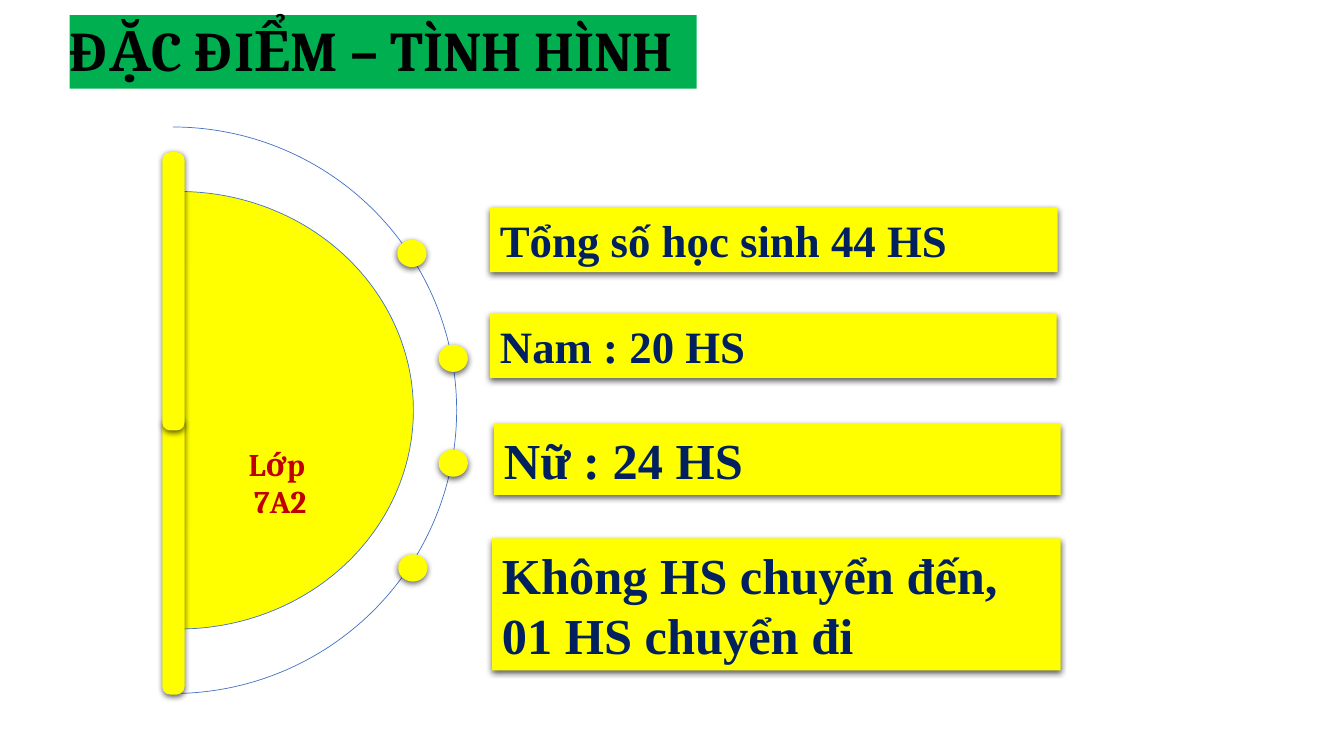
from dataclasses import dataclass

from pptx import Presentation
from pptx.dml.color import RGBColor
from pptx.enum.shapes import MSO_SHAPE
from pptx.enum.text import MSO_ANCHOR, MSO_AUTO_SIZE, PP_ALIGN
from pptx.oxml import parse_xml
from pptx.oxml.ns import nsdecls, qn
from pptx.util import Inches, Pt


@dataclass(frozen=True)
class Theme:
    yellow: str = "FFFF00"
    green: str = "00B050"
    white: str = "FFFFFF"
    outline: str = "4472C4"
    black: str = "000000"
    navy: str = "002060"
    red: str = "C00000"
    heading_font: str = "Cambria"
    fact_font: str = "Times New Roman"
    title_size: float = 40
    fact_size: float = 32
    large_fact_size: float = 36
    class_size: float = 22.5


@dataclass(frozen=True)
class Box:
    left: float
    top: float
    width: float
    height: float

    def lengths(self) -> list:
        return [Inches(n) for n in (self.left, self.top, self.width, self.height)]


@dataclass(frozen=True)
class Fact:
    text: str
    box: Box
    size: float


@dataclass(frozen=True)
class Arc:
    box: Box
    fill: str
    end: float


THEME = Theme()
FACTS = [
    Fact("Tổng số học sinh 44 HS", Box(4.86, 2.06, 5.63, 0.64), THEME.fact_size),
    Fact("Nam : 20 HS", Box(4.86, 3.11, 5.62, 0.64), THEME.fact_size),
    Fact("Nữ : 24 HS", Box(4.9, 4.2, 5.62, 0.71), THEME.large_fact_size),
    Fact("Không HS chuyển đến, 01 HS chuyển đi", Box(4.88, 5.34, 5.64, 1.31),
         THEME.large_fact_size),
]
OUTER_ARC = Arc(Box(-1.1, 1.26, 5.63, 5.62), THEME.white, 54.07)
INNER_ARC = Arc(Box(-0.55, 1.9, 4.65, 4.34), THEME.yellow, 53.65)
DOT_LEFTS = [3.94, 4.35, 4.35, 3.95]
DOT_TOP, DOT_STEP = 2.38, 1.04
SPINE_TOPS = [4.13, 1.51]


def soft_shadow():
    return parse_xml(
        f'<a:outerShdw {nsdecls("a")} blurRad="{Pt(4.5)}" dist="{Pt(1.5)}" '
        'dir="5400000" algn="ctr" rotWithShape="0"><a:srgbClr val="000000">'
        '<a:alpha val="63000"/></a:srgbClr></a:outerShdw>')


def write(frame, text: str, *, font: str, size: float, color: str,
          align=PP_ALIGN.LEFT, anchor=MSO_ANCHOR.MIDDLE, side_inset: float = 0.1,
          spacing: float = 1.0, fit=MSO_AUTO_SIZE.NONE, shadow: bool = False) -> None:
    frame.text = text
    frame.word_wrap = True
    frame.auto_size = fit
    frame.vertical_anchor = anchor
    frame.margin_left = frame.margin_right = Inches(side_inset)
    frame.margin_top = frame.margin_bottom = Inches(0.05)
    for paragraph in frame.paragraphs:
        paragraph.alignment = align
        paragraph.line_spacing = spacing
        for run in paragraph.runs:
            run.font.name = font
            run.font.size = Pt(size)
            run.font.bold = True
            run.font.color.rgb = RGBColor.from_string(color)
            if shadow:
                effects = parse_xml(f'<a:effectLst {nsdecls("a")}/>')
                effects.append(soft_shadow())
                run._r.get_or_add_rPr().find(qn("a:solidFill")).addnext(effects)


def add_filled(slide, kind: MSO_SHAPE, box: Box, fill: str, shadow: bool = True):
    shape = slide.shapes.add_shape(kind, *box.lengths())
    shape.fill.solid()
    shape.fill.fore_color.rgb = RGBColor.from_string(fill)
    shape.line.fill.background()
    shape.shadow.inherit = False
    if shadow:
        shape._element.spPr.find(qn("a:effectLst")).append(soft_shadow())
    return shape


def add_arc(slide, arc: Arc) -> None:
    shape = add_filled(slide, MSO_SHAPE.ARC, arc.box, arc.fill, shadow=False)
    shape.adjustments[0] = 162
    shape.adjustments[1] = arc.end
    shape.line.color.rgb = RGBColor.from_string(THEME.outline)
    shape.line.width = Pt(0.5)


def add_title(slide) -> None:
    title = slide.shapes.title
    title.left, title.top, title.width, title.height = Box(0.69, 0.15, 6.22, 0.73).lengths()
    title.fill.solid()
    title.fill.fore_color.rgb = RGBColor.from_string(THEME.green)
    write(title.text_frame, "ĐẶC ĐIỂM – TÌNH HÌNH", font=THEME.heading_font,
          size=THEME.title_size, color=THEME.black, anchor=MSO_ANCHOR.BOTTOM,
          side_inset=0, spacing=0.9)


def main() -> None:
    deck = Presentation()
    deck.slide_width, deck.slide_height = Inches(13.33), Inches(7.5)
    slide = deck.slides.add_slide(deck.slide_layouts[5])
    add_title(slide)

    # Outer arc with its dots
    add_arc(slide, OUTER_ARC)
    for row, left in enumerate(DOT_LEFTS):
        dot = Box(left, DOT_TOP + row * DOT_STEP, 0.29, 0.27)
        add_filled(slide, MSO_SHAPE.OVAL, dot, THEME.yellow)

    # Half disc and its spine
    add_arc(slide, INNER_ARC)
    for top in SPINE_TOPS:
        spine = add_filled(slide, MSO_SHAPE.ROUNDED_RECTANGLE,
                           Box(1.61, top, 0.22, 2.76), THEME.yellow)
        spine.adjustments[0] = 0.35
        spine.rotation = 180

    # Class name
    class_name = slide.shapes.add_textbox(*Box(1.77, 2.57, 2.02, 2.64).lengths())
    write(class_name.text_frame, "Lớp \n7A2", font=THEME.heading_font,
          size=THEME.class_size, color=THEME.red, align=PP_ALIGN.CENTER,
          anchor=MSO_ANCHOR.BOTTOM, side_inset=0, shadow=True)

    # Facts about the class
    for fact in FACTS:
        bar = add_filled(slide, MSO_SHAPE.RECTANGLE, fact.box, THEME.yellow)
        write(bar.text_frame, fact.text, font=THEME.fact_font, size=fact.size,
              color=THEME.navy, fit=MSO_AUTO_SIZE.SHAPE_TO_FIT_TEXT)

    deck.save("out.pptx")


if __name__ == "__main__":
    main()
